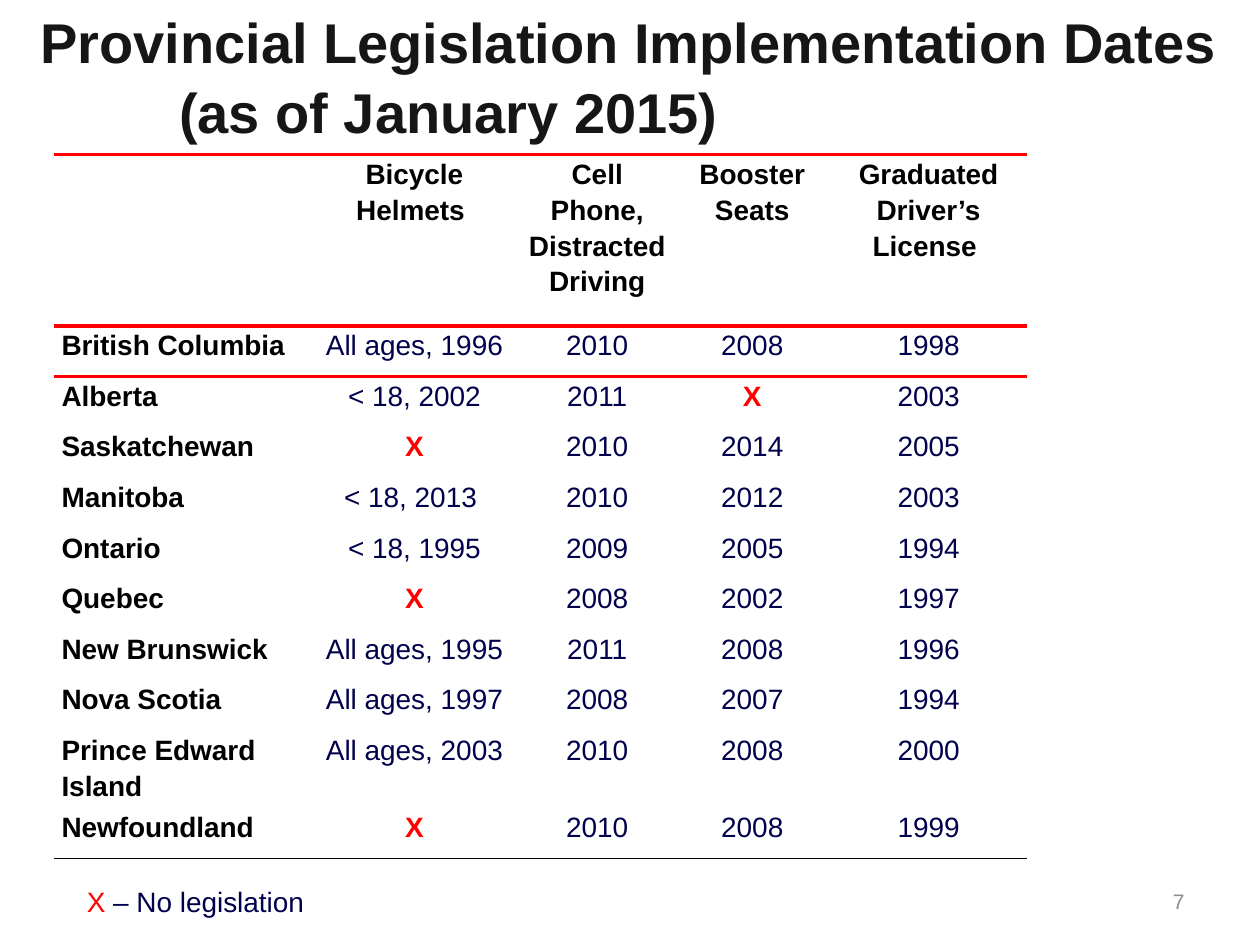
"""Build a slide tabulating provincial road-safety legislation dates."""
from dataclasses import dataclass

from lxml import etree
from pptx import Presentation
from pptx.dml.color import RGBColor
from pptx.enum import text as t
from pptx.oxml import ns
from pptx.util import Cm, Pt

TITLE = ("Provincial Legislation Implementation Dates", "(as of January 2015)")
HEADINGS = ("", "Bicycle Helmets ", "Cell Phone, Distracted Driving",
            "Booster Seats", "Graduated Driver’s License ")
PROVINCES = (
    ("British Columbia", "All ages, 1996", "2010", "2008", "1998"),
    ("Alberta", "< 18, 2002", "2011", "X", "2003"),
    ("Saskatchewan", "X", "2010", "2014", "2005"),
    ("Manitoba", "< 18, 2013 ", "2010", "2012", "2003"),
    ("Ontario", "< 18, 1995", "2009", "2005", "1994"),
    ("Quebec", "X", "2008", "2002", "1997"),
    ("New Brunswick", "All ages, 1995", "2011", "2008", "1996"),
    ("Nova Scotia", "All ages, 1997", "2008", "2007", "1994"),
    ("Prince Edward Island", "All ages, 2003", "2010", "2008", "2000"),
    ("Newfoundland", "X", "2010", "2008", "1999"),
)
LEGEND = ("X ", "– No legislation")
PAGE = "7"

COLUMN_WIDTHS = (5.13, 4.27, 3.1, 3.15, 3.96)
HEADING_HEIGHT, PROVINCE_HEIGHT = 3.45, 1.02
PLAIN_STYLE = "{2D5ABB26-0587-4C30-8999-92F81FD0307C}"
LEFT, CENTER, RIGHT = t.PP_ALIGN.LEFT, t.PP_ALIGN.CENTER, t.PP_ALIGN.RIGHT


@dataclass(frozen=True)
class Theme:
    font: str = "Arial"
    title: str = "161616"
    label: str = "000000"
    value: str = "00004C"
    accent: str = "FF0000"
    page: str = "8C8C8C"
    title_size: int = 32
    body_size: int = 16
    page_size: int = 12


THEME = Theme()


def write(paragraph, words, color, size=THEME.body_size, bold=False, align=LEFT, spacing=None):
    run = paragraph.add_run()
    run.text = words
    run.font.name, run.font.size, run.font.bold = THEME.font, Pt(size), bold
    run.font.color.rgb = RGBColor.from_string(color)
    paragraph.alignment = align
    if spacing:
        paragraph.line_spacing = spacing


def set_margins(frame, left, top, right, bottom):
    frame.margin_left, frame.margin_top = Cm(left), Cm(top)
    frame.margin_right, frame.margin_bottom = Cm(right), Cm(bottom)


def add_rule(cell, side, color, width):
    line = etree.SubElement(cell._tc.get_or_add_tcPr(), ns.qn(f"a:ln{side}"), w=str(Pt(width)))
    fill = etree.SubElement(line, ns.qn("a:solidFill"))
    etree.SubElement(fill, ns.qn("a:srgbClr"), val=color)


def add_title(slide):
    title = slide.shapes.title
    title.left, title.top, title.width, title.height = Cm(0.81), Cm(1.12), Cm(24.51), Cm(1.47)
    frame = title.text_frame
    frame.word_wrap, frame.auto_size = True, t.MSO_AUTO_SIZE.NONE
    frame.vertical_anchor = t.MSO_ANCHOR.MIDDLE
    set_margins(frame, 0, 0, 0, 0.69)
    heading, date = frame.paragraphs[0], frame.add_paragraph()
    for paragraph, words in zip((heading, date), TITLE):
        write(paragraph, words, THEME.title, THEME.title_size, bold=True, spacing=1.04)
        paragraph.space_before = Pt(0)
    date._p.get_or_add_pPr().set("marL", str(Cm(2.8)))


def add_dates(slide):
    rows = (HEADINGS, *PROVINCES)
    heights = [HEADING_HEIGHT] + [PROVINCE_HEIGHT] * len(PROVINCES)
    dates = slide.shapes.add_table(len(rows), len(HEADINGS), Cm(1.09), Cm(3.12),
                                   Cm(sum(COLUMN_WIDTHS)), Cm(sum(heights))).table
    dates.first_row = dates.horz_banding = False
    dates._tbl.tblPr.find(ns.qn("a:tableStyleId")).text = PLAIN_STYLE
    for column, width in zip(dates.columns, COLUMN_WIDTHS):
        column.width = Cm(width)
    for r, (row, height) in enumerate(zip(rows, heights)):
        dates.rows[r].height = Cm(height)
        for c, words in enumerate(row):
            cell = dates.cell(r, c)
            set_margins(cell, 0.15, 0, 0.15, 0)
            if r < 2:
                add_rule(cell, "T", THEME.accent, 2.25)
            if r == 0:
                add_rule(cell, "B", THEME.accent, 2.25)
            elif r == len(PROVINCES):
                add_rule(cell, "B", THEME.label, 1)
            cell.fill.background()
            label, missing = r == 0 or c == 0, words == "X"
            color = THEME.label if label else THEME.accent if missing else THEME.value
            if words:
                write(cell.text_frame.paragraphs[0], words, color, bold=label or missing,
                      align=CENTER if c else LEFT, spacing=1.15)


def add_note(slide, left, top, width, height, anchor, wrap):
    frame = slide.shapes.add_textbox(Cm(left), Cm(top), Cm(width), Cm(height)).text_frame
    frame.word_wrap, frame.vertical_anchor = wrap, anchor
    return frame.paragraphs[0]


def main():
    deck = Presentation()
    deck.slide_width, deck.slide_height = Cm(25.4), Cm(19.05)
    slide = deck.slides.add_slide(deck.slide_layouts[5])
    add_title(slide)
    page = add_note(slide, 18.21, 17.65, 5.92, 1.02, t.MSO_ANCHOR.MIDDLE, True)
    write(page, PAGE, THEME.page, THEME.page_size, align=RIGHT)
    add_dates(slide)
    legend = add_note(slide, 1.5, 17.7, 4.93, 1.7, t.MSO_ANCHOR.TOP, False)
    for words, color in zip(LEGEND, (THEME.accent, THEME.value)):
        write(legend, words, color)
    deck.save("out.pptx")


if __name__ == "__main__":
    main()
